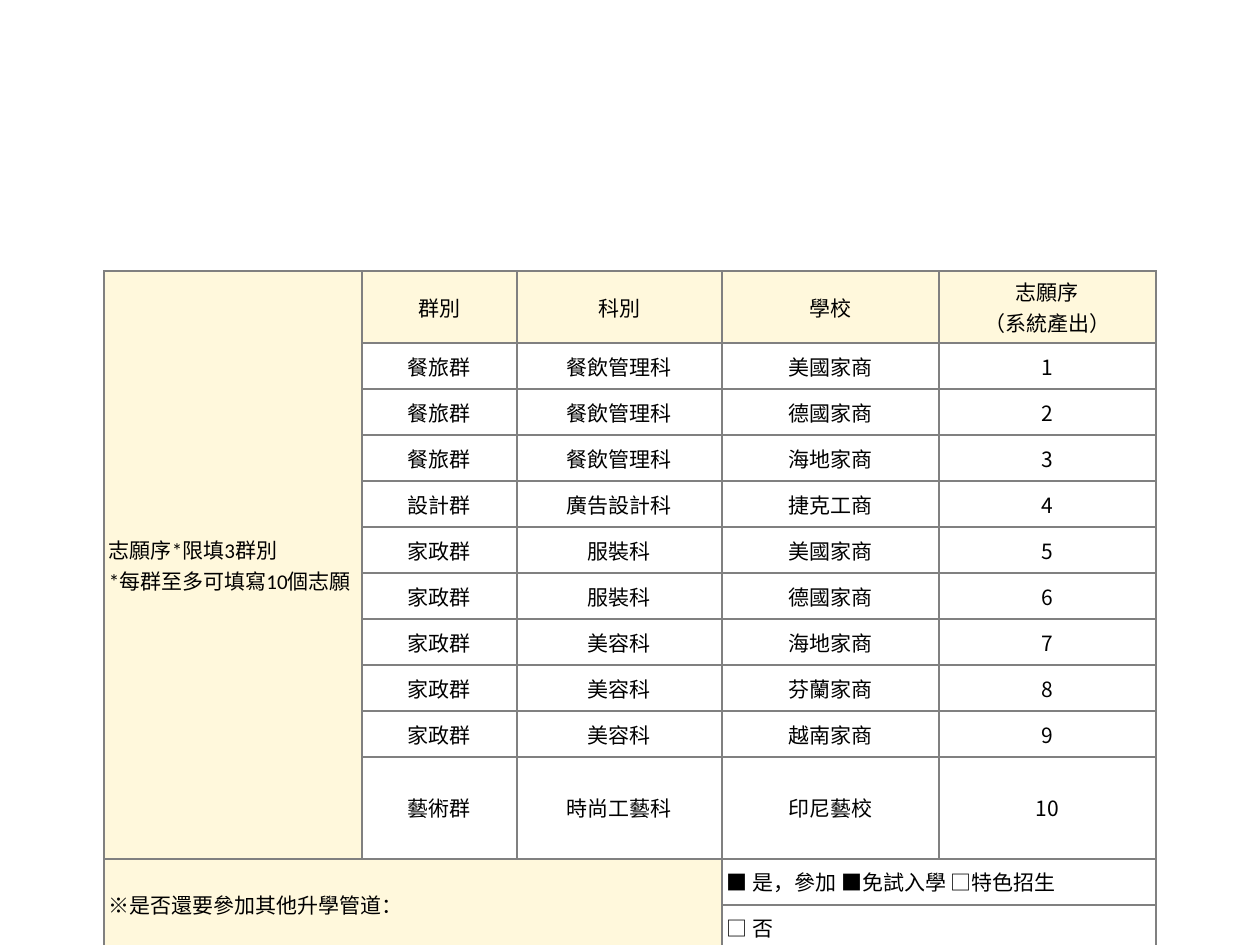
"""Build the slide with the table of ranked school choices."""
from dataclasses import dataclass

from lxml import etree
from pptx import Presentation
from pptx.dml.color import RGBColor
from pptx.enum.text import MSO_ANCHOR, PP_ALIGN
from pptx.oxml.ns import qn
from pptx.util import Pt

PX = 914400 // 126
LEFT, CENTER = PP_ALIGN.LEFT, PP_ALIGN.CENTER
MIDDLE = MSO_ANCHOR.MIDDLE
BLANK_LAYOUT = 6


@dataclass(frozen=True)
class Theme:
    label_fill: str = "FFF8DC"
    value_fill: str = "FFFFFF"
    border: str = "808080"
    ink: str = "000000"
    body_font: str = "Calibri"
    symbol_font: str = "Noto Sans CJK SC"
    size: int = 12
    border_width: int = 1


THEME = Theme()
COLUMN_WIDTHS = [258, 155, 205, 217, 217]
ROW_HEIGHTS = [72] + [46] * 9 + [102, 46, 46]
HEADERS = ["群別", "科別", "學校", "志願序\n（系統產出）"]
CHOICES = [
    ("餐旅群", "餐飲管理科", "美國家商"),
    ("餐旅群", "餐飲管理科", "德國家商"),
    ("餐旅群", "餐飲管理科", "海地家商"),
    ("設計群", "廣告設計科", "捷克工商"),
    ("家政群", "服裝科", "美國家商"),
    ("家政群", "服裝科", "德國家商"),
    ("家政群", "美容科", "海地家商"),
    ("家政群", "美容科", "芬蘭家商"),
    ("家政群", "美容科", "越南家商"),
    ("藝術群", "時尚工藝科", "印尼藝校"),
]
RANKING_NOTE = "志願序*限填3群別\v*每群至多可填寫10個志願"
SYMBOLS = "※■□"


def px(length):
    """Turn a length in px into EMU."""
    return length * PX


def write_text(frame, *runs, align=LEFT, font=THEME.body_font):
    """Write runs, given as text or (text, font), with newlines starting paragraphs."""
    paragraph = frame.paragraphs[0]
    paragraph.alignment = align
    for run_spec in runs:
        text, typeface = (run_spec, font) if isinstance(run_spec, str) else run_spec
        for index, block in enumerate(text.split("\n")):
            if index:
                paragraph = frame.add_paragraph()
                paragraph.alignment = align
            for part, line in enumerate(block.split("\v")):
                if part:
                    paragraph.add_line_break()
                run = paragraph.add_run()
                run.text = line
                run.font.name = typeface
                run.font.size = Pt(THEME.size)
                run.font.color.rgb = RGBColor.from_string(THEME.ink)


def format_cell(cell, fill):
    """Give a cell its borders, fill, margins and anchor."""
    properties = cell._tc.get_or_add_tcPr()
    for side in ("a:lnL", "a:lnR", "a:lnT", "a:lnB"):
        line = etree.SubElement(properties, qn(side), w=str(Pt(THEME.border_width)))
        solid = etree.SubElement(line, qn("a:solidFill"))
        etree.SubElement(solid, qn("a:srgbClr"), val=THEME.border)
    cell.fill.solid()
    cell.fill.fore_color.rgb = RGBColor.from_string(fill)
    cell.margin_left = cell.margin_right = px(5)
    cell.margin_top = cell.margin_bottom = px(5)
    cell.vertical_anchor = MIDDLE


def add_choice_table(slide):
    """Add the formatted grid with its merged cells."""
    table = slide.shapes.add_table(
        len(ROW_HEIGHTS), len(COLUMN_WIDTHS), px(104), px(271),
        px(sum(COLUMN_WIDTHS)), px(sum(ROW_HEIGHTS))).table
    for column, width in zip(table.columns, COLUMN_WIDTHS):
        column.width = px(width)
    for row, height in zip(table.rows, ROW_HEIGHTS):
        row.height = px(height)
    for row_index, row in enumerate(table.rows):
        label_columns = 5 if row_index == 0 else 1 if row_index < 11 else 3
        for column_index, cell in enumerate(row.cells):
            is_label = column_index < label_columns
            format_cell(cell, THEME.label_fill if is_label else THEME.value_fill)
    for first, last in [((0, 0), (10, 0)), ((11, 0), (12, 2)),
                        ((11, 3), (11, 4)), ((12, 3), (12, 4))]:
        table.cell(*first).merge(table.cell(*last))
    return table


def fill_choices(table):
    """Write the headers and the ranked choices."""
    write_text(table.cell(0, 0).text_frame, RANKING_NOTE)
    for column, header in enumerate(HEADERS, 1):
        write_text(table.cell(0, column).text_frame, header, align=CENTER)
    for rank, choice in enumerate(CHOICES, 1):
        for column, value in enumerate(choice, 1):
            write_text(table.cell(rank, column).text_frame, value, align=CENTER)
        write_text(table.cell(rank, 4).text_frame, str(rank),
                   align=CENTER, font=THEME.symbol_font)


def fill_other_admission(table):
    """Write the question on other admission routes and its answers."""
    symbol = THEME.symbol_font
    write_text(table.cell(11, 0).text_frame,
               ("※", symbol), "是否還要參加其他升學管道：")
    write_text(table.cell(11, 3).text_frame,
               ("■ ", symbol), "是，參加 ", ("■", symbol), "免試入學 □特色招生")
    write_text(table.cell(12, 3).text_frame, ("□ ", symbol), "否")


def main():
    """Build and save the slide."""
    presentation = Presentation()
    presentation.slide_width, presentation.slide_height = px(1260), px(945)
    slide = presentation.slides.add_slide(presentation.slide_layouts[BLANK_LAYOUT])
    table = add_choice_table(slide)
    fill_choices(table)
    fill_other_admission(table)
    presentation.save("out.pptx")


if __name__ == "__main__":
    main()
